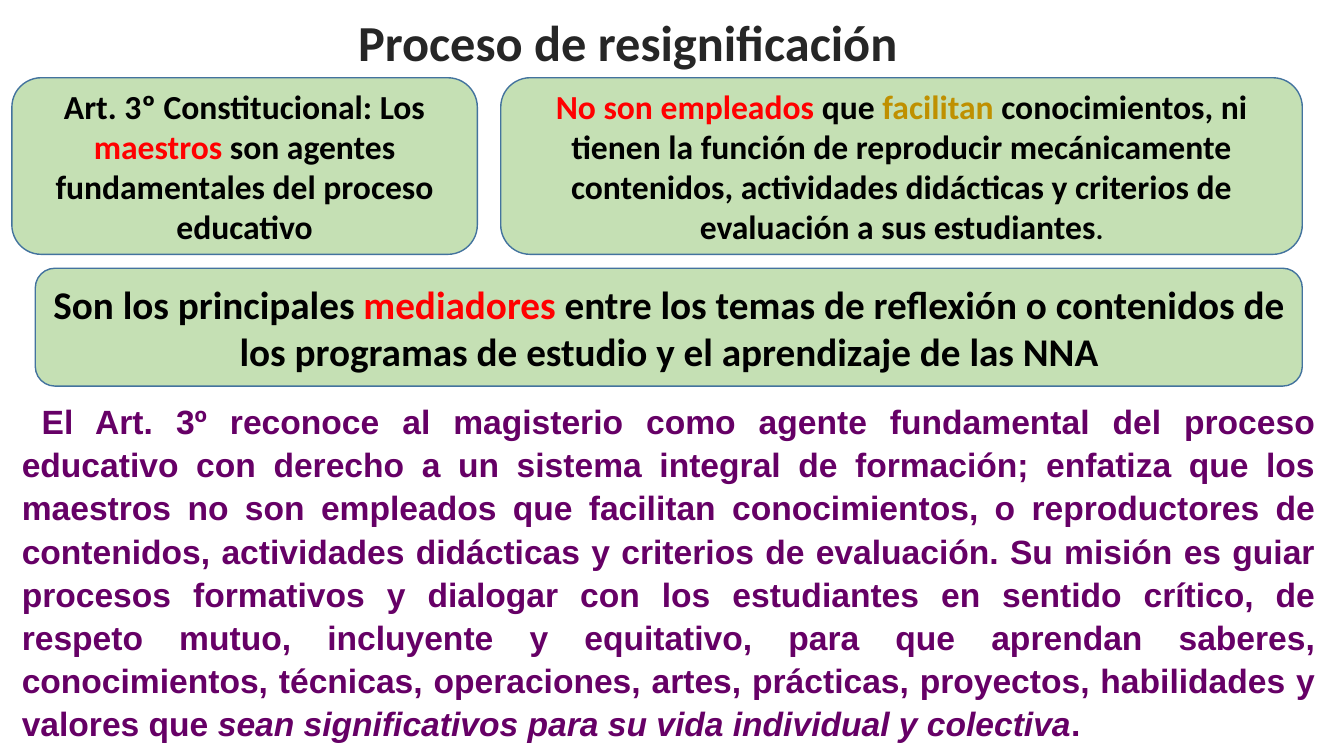
import dataclasses

import pptx
import pptx.dml.color
import pptx.enum.shapes
import pptx.enum.text
import pptx.util

Cm = pptx.util.Cm
Pt = pptx.util.Pt
Align = pptx.enum.text.PP_ALIGN
Anchor = pptx.enum.text.MSO_ANCHOR


@dataclasses.dataclass(frozen=True)
class Theme:
    fill: str = "C5E0B4"
    edge: str = "43739E"
    ink: str = "000000"
    title: str = "262626"
    red: str = "FF0000"
    gold: str = "BF9000"
    plum: str = "660066"
    head: str = "Calibri"
    body: str = "Arial"
    small: int = 20
    base: int = 24
    large: int = 28
    huge: int = 36


THEME = Theme()


def paint(hue):
    return pptx.dml.color.RGBColor.from_string(hue)


def write(shape, runs, size=THEME.base, color=THEME.ink, font=THEME.head,
          align=Align.CENTER, anchor=Anchor.TOP, wrap=True, lead=None, indent=None):
    """Fill a shape with one bold paragraph; a run is (text, changes)."""
    frame = shape.text_frame
    frame.word_wrap = wrap
    frame.vertical_anchor = anchor
    para = frame.paragraphs[0]
    para.alignment = align
    if lead:
        para.line_spacing = lead
    if indent:
        para._p.get_or_add_pPr().set("indent", str(indent))
    for words, look in runs:
        run = para.add_run()
        run.text = words
        run.font.name = font
        run.font.bold = True
        run.font.italic = look.get("italic", False)
        run.font.size = Pt(look.get("size", size))
        run.font.color.rgb = paint(look.get("color", color))


def panel(slide, box, runs, **look):
    """Green rounded panel with centred text."""
    kind = pptx.enum.shapes.MSO_SHAPE.FLOWCHART_ALTERNATE_PROCESS
    shape = slide.shapes.add_shape(kind, *map(Cm, box))
    shape.shadow.inherit = False
    shape.fill.solid()
    shape.fill.fore_color.rgb = paint(THEME.fill)
    shape.line.color.rgb = paint(THEME.edge)
    shape.line.width = Pt(1)
    write(shape, runs, anchor=Anchor.MIDDLE, **look)


def heading(slide, box):
    shape = slide.shapes.add_textbox(*map(Cm, box))
    write(shape, [("Proceso de resignificación", {})],
          size=THEME.huge, color=THEME.title, wrap=False)


def roles(slide, box):
    """Two panels side by side: what teachers are and are not."""
    left, top, width, height = box
    first, gap = 11.73, 0.59
    red = {"color": THEME.red}
    panel(slide, (left, top, first, height), [
        ("Art. 3º Constitucional: Los ", {}),
        ("maestros", red),
        (" son agentes fundamentales del proceso educativo", {}),
    ])
    shift = first + gap
    panel(slide, (left + shift, top, width - shift, height), [
        ("No son empleados ", red),
        ("que ", {}),
        ("facilitan ", {"color": THEME.gold}),
        ("conocimientos, ni tienen la función de reproducir mecánicamente "
         "contenidos, actividades didácticas y criterios de evaluación "
         "a sus estudiantes", {}),
        (".", {"size": THEME.small}),
    ])


def bridge(slide, box):
    """Wide panel on teachers as mediators."""
    panel(slide, box, [
        ("Son los principales ", {}),
        ("mediadores", {"color": THEME.red}),
        (" entre los temas de reflexión o contenidos de los programas "
         "de estudio y el aprendizaje de las NNA", {}),
    ], size=THEME.large)


def essay(slide, box):
    """Justified closing paragraph."""
    shape = slide.shapes.add_textbox(*map(Cm, box))
    write(shape, [
        ("El Art. 3º reconoce al magisterio como agente fundamental del proceso "
         "educativo con derecho a un sistema integral de formación; enfatiza que "
         "los maestros no son empleados que facilitan conocimientos, o "
         "reproductores de contenidos, actividades didácticas y criterios de "
         "evaluación. Su misión es guiar procesos formativos y dialogar con los "
         "estudiantes en sentido crítico, de respeto mutuo, incluyente y "
         "equitativo, para que aprendan saberes, conocimientos, técnicas, "
         "operaciones, artes, prácticas, proyectos, habilidades y valores que ", {}),
        ("sean significativos para su vida individual y colectiva", {"italic": True}),
        (".", {}),
    ], color=THEME.plum, font=THEME.body, align=Align.JUSTIFY,
        lead=1.07, indent=Cm(0.5))


def main():
    deck = pptx.Presentation()
    deck.slide_width, deck.slide_height = Cm(33.87), Cm(19.05)
    slide = deck.slides.add_slide(deck.slide_layouts[6])
    # Regions from top to bottom: left, top, width, height
    heading(slide, (8.69, 0.15, 14.27, 1.8))
    roles(slide, (0.3, 1.96, 32.52, 4.45))
    bridge(slide, (0.89, 6.76, 31.93, 2.97))
    essay(slide, (0.3, 9.91, 33.1, 9.04))
    deck.save("out.pptx")


if __name__ == "__main__":
    main()
